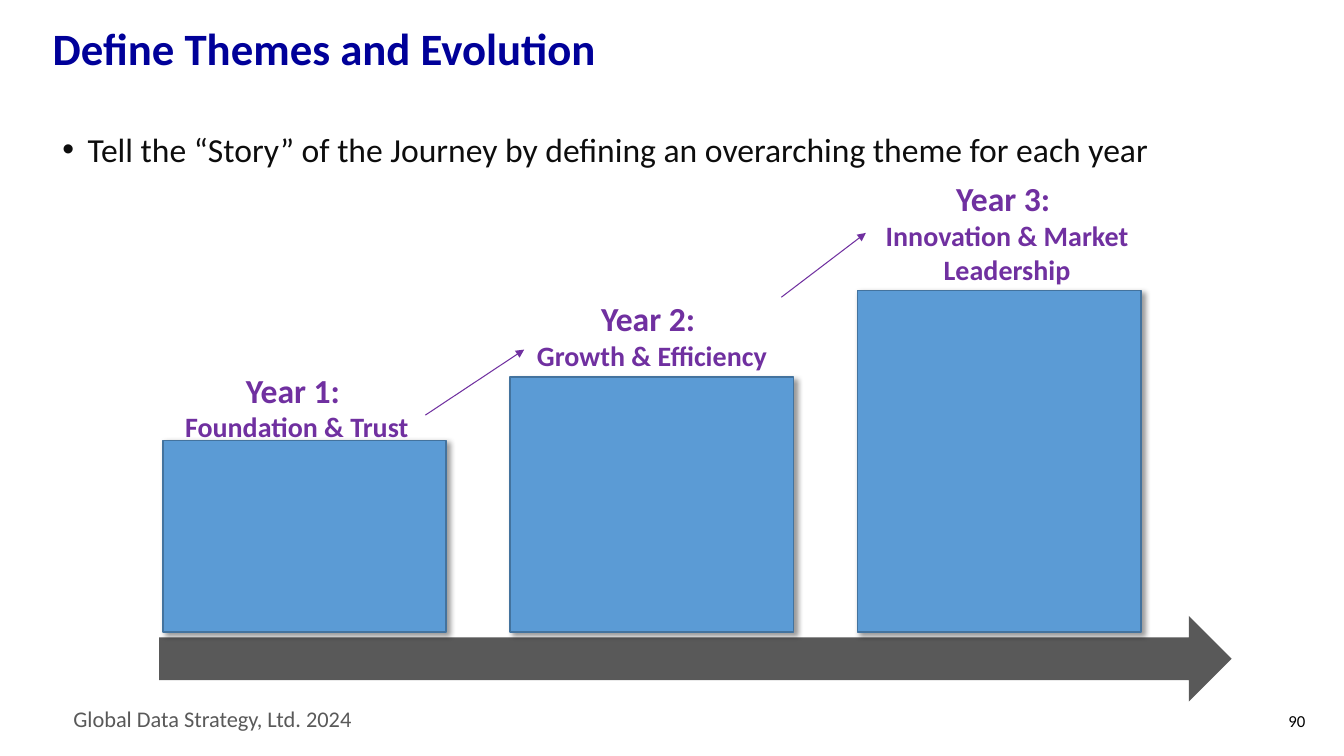
from lxml import etree
from pptx import Presentation
from pptx.dml.color import RGBColor
from pptx.enum import shapes as sh, text as tx
from pptx.oxml import ns, parse_xml
from pptx.util import Cm, Pt

NAVY = RGBColor(0x00, 0x00, 0x99)
PURPLE = RGBColor(0x70, 0x30, 0xA0)
BLUE = RGBColor(0x5B, 0x9B, 0xD5)
EDGE = RGBColor(0x43, 0x73, 0x9E)
GRAY = RGBColor(0x59, 0x59, 0x59)
INK = RGBColor(0x0D, 0x0D, 0x0D)
BLACK = RGBColor(0, 0, 0)

SHADOW = (f'<a:effectLst {ns.nsdecls("a")}>'
          '<a:outerShdw blurRad="50800" dist="38100" dir="2700000" algn="tl" rotWithShape="0">'
          '<a:srgbClr val="000000"><a:alpha val="40000"/></a:srgbClr>'
          '</a:outerShdw></a:effectLst>')

# Name, theme, bar height, label left and top relative to the bar's top left corner
YEARS = [
    ("Year 1: ", "Foundation & Trust", 4.83, -0.2, -1.91),
    ("Year 2: ", "Growth & Efficiency", 6.43, 0.0, -2.11),
    ("Year 3: ", "Innovation & Market Leadership", 8.61, 0.2, -2.95),
]
# Start and end of each arrow, relative to the chart's left and base
LINKS = [(6.61, -5.47, 9.1, -7.12), (15.58, -8.44, 17.71, -10.06)]


def style(para, size, color, bold=False, align=tx.PP_ALIGN.LEFT):
    para.alignment = align
    for run in para.runs:
        font = run.font
        font.name, font.size, font.bold = "Calibri", Pt(size), bold
        font.color.rgb = color


def add_text(slide, box, lines, sizes, color, **look):
    frame = slide.shapes.add_textbox(*map(Cm, box)).text_frame
    frame.word_wrap = True
    frame.text = "\n".join(lines)
    for para, size in zip(frame.paragraphs, sizes):
        style(para, size, color, **look)
    return frame


def add_title(slide, box):
    title = slide.shapes.title
    title.left, title.top, title.width, title.height = map(Cm, box)
    frame = title.text_frame
    frame.text = "Define Themes and Evolution"
    frame.auto_size = tx.MSO_AUTO_SIZE.NONE
    frame.vertical_anchor = tx.MSO_ANCHOR.MIDDLE
    para = frame.paragraphs[0]
    para.line_spacing = 0.9
    style(para, 32, NAVY, bold=True)


def add_bullet(slide, box):
    line = "Tell the “Story” of the Journey by defining an overarching theme for each year"
    frame = add_text(slide, box, [line], [24], INK)
    props = frame.paragraphs[0]._p.get_or_add_pPr()
    props.set("marL", str(Cm(0.64)))
    props.set("indent", str(Cm(-0.64)))
    etree.SubElement(props, ns.qn("a:buFont")).set("typeface", "Arial")
    etree.SubElement(props, ns.qn("a:buChar")).set("char", "•")


def add_bar(slide, box):
    bar = slide.shapes.add_shape(sh.MSO_SHAPE.RECTANGLE, *map(Cm, box))
    bar.fill.solid()
    bar.fill.fore_color.rgb = BLUE
    bar.line.color.rgb = EDGE
    bar.line.width = Pt(1.35)
    bar._element.spPr.append(parse_xml(SHADOW))


def add_link(slide, ends):
    link = slide.shapes.add_connector(sh.MSO_CONNECTOR.STRAIGHT, *map(Cm, ends))
    link.line.color.rgb = PURPLE
    link.line.width = Pt(0.75)
    etree.SubElement(link.line._get_or_add_ln(), ns.qn("a:tailEnd")).set("type", "triangle")
    etree.SubElement(link._element.spPr, ns.qn("a:effectLst"))


def add_axis(slide, box):
    axis = slide.shapes.add_shape(sh.MSO_SHAPE.RIGHT_ARROW, *map(Cm, box))
    axis.shadow.inherit = False
    axis.fill.solid()
    axis.fill.fore_color.rgb = GRAY
    axis.line.fill.background()


def add_steps(slide, left, base, wide, step):
    """Draw the time arrow and, on it, one labelled bar per year."""
    add_axis(slide, (left - 0.1, base - 0.41, 27.03, 2.16))
    for i, (year, theme, high, dx, dy) in enumerate(YEARS):
        x, y = left + i * step, base - high
        add_bar(slide, (x, y, wide, high))
        add_text(slide, (x + dx, y + dy, wide, -dy), [year, theme], [24, 20],
                 PURPLE, bold=True, align=tx.PP_ALIGN.CENTER)
    for x1, y1, x2, y2 in LINKS:
        add_link(slide, (left + x1, base + y1, left + x2, base + y2))


def add_footer(slide, top):
    add_text(slide, (1.6, top, 9.19, 0.94), ["Global Data Strategy, Ltd. 2024"], [16], GRAY)
    frame = add_text(slide, (31.55, top, 1.6, 1.02), ["90"], [12], BLACK,
                     align=tx.PP_ALIGN.RIGHT)
    frame.vertical_anchor = tx.MSO_ANCHOR.MIDDLE


def main():
    deck = Presentation()
    deck.slide_width, deck.slide_height = Cm(33.87), Cm(19.05)
    slide = deck.slides.add_slide(deck.slide_layouts[5])
    add_title(slide, (1.07, 0.41, 29.21, 1.73))
    add_bullet(slide, (1.32, 3.12, 31.06, 6.63))
    add_steps(slide, left=4.11, base=15.93, wide=7.14, step=8.75)
    add_footer(slide, 17.65)
    deck.save("out.pptx")


if __name__ == "__main__":
    main()
